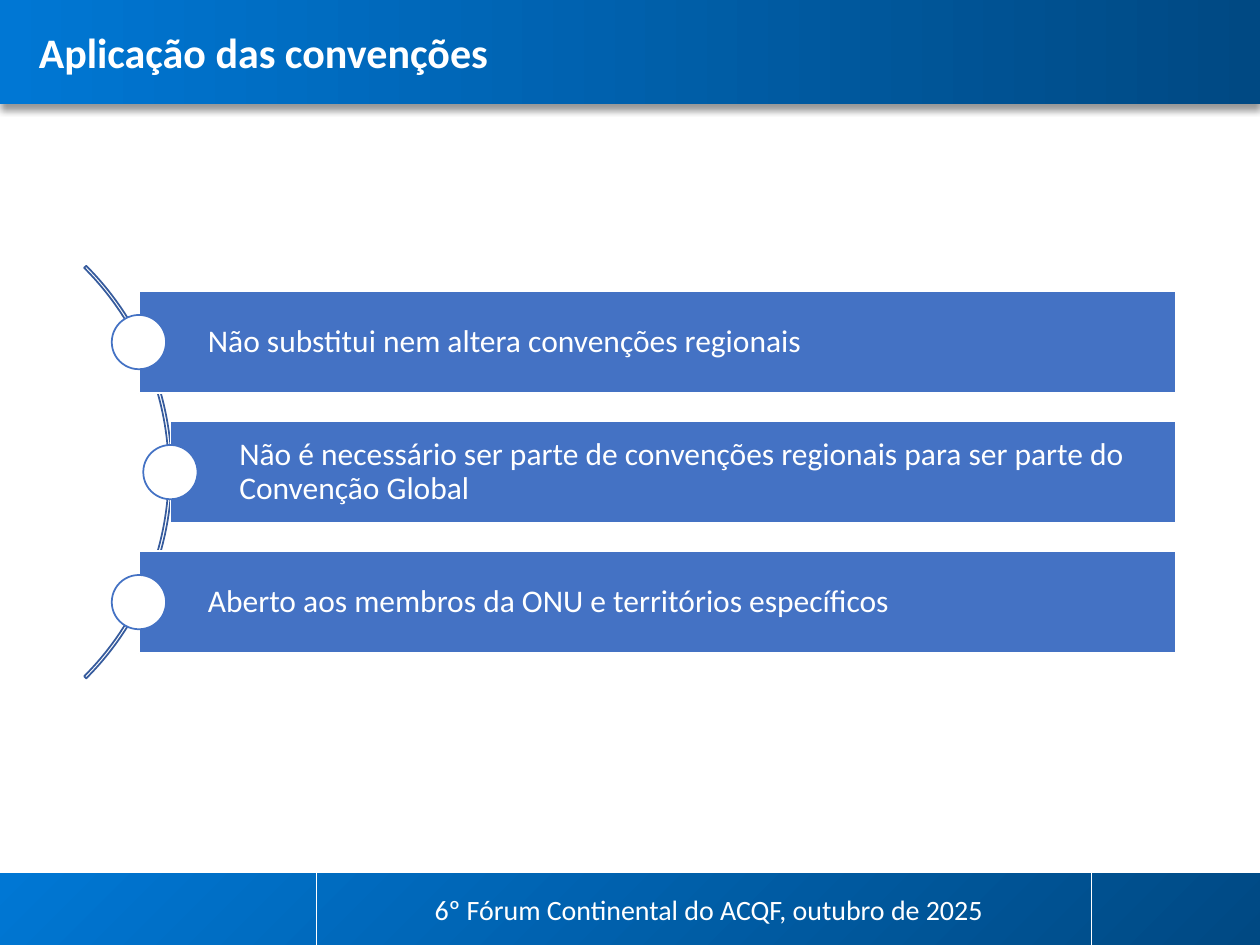
from dataclasses import dataclass

from lxml.etree import SubElement
from pptx import Presentation
from pptx.dml.color import RGBColor
from pptx.enum.shapes import MSO_CONNECTOR as Connector, MSO_SHAPE as Shape
from pptx.enum.text import MSO_ANCHOR as Anchor, MSO_AUTO_SIZE as AutoSize, PP_ALIGN as Align
from pptx.oxml.ns import qn
from pptx.util import Pt


@dataclass(frozen=True)
class Theme:
    font: str = "Calibri"
    title_size: float = 24
    body_size: float = 18
    footer_size: float = 16
    white: RGBColor = RGBColor(0xFF, 0xFF, 0xFF)
    bright: RGBColor = RGBColor(0x00, 0x77, 0xD4)
    dark: RGBColor = RGBColor(0x00, 0x49, 0x83)
    bar: RGBColor = RGBColor(0x44, 0x72, 0xC4)
    arc: RGBColor = RGBColor(0x36, 0x5B, 0x9D)


@dataclass(frozen=True)
class Band:
    top: float
    height: float
    start: RGBColor
    end: RGBColor
    angle: float


@dataclass(frozen=True)
class Label:
    text: str
    left: float
    top: float
    width: float
    height: float
    size: float
    bold: bool = False


@dataclass(frozen=True)
class Item:
    text: str
    left: float


THEME = Theme()
WIDTH, HEIGHT = 720, 540
BAR_RIGHT, BAR_HEIGHT, BAR_PITCH = 671.7, 58.4, 74.3
CENTRE_Y = 269.8
DOT = 31
ARC_LEFT, ARC_SIZE = -235.3, 333.4

BANDS = [
    Band(499, 41, THEME.dark, THEME.bright, 135),
    Band(0, 59.5, THEME.bright, THEME.dark, 0),
]
DIVIDERS = [180.8, 623.5]
LABELS = [
    Label("Aplicação das convenções", 15.1, 11.5, 502, 36, THEME.title_size, True),
    Label("6º Fórum Continental do ACQF, outubro de 2025", 241.2, 506.2, 366.5, 46,
          THEME.footer_size),
]
ITEMS = [
    Item("Não substitui nem altera convenções regionais", 79.4),
    Item("Não é necessário ser parte de convenções regionais para ser parte do \vConvenção Global",
         97.4),
    Item("Aberto aos membros da ONU e territórios específicos", 79.4),
]


def add_shape(slide, kind: Shape, left: float, top: float, width: float, height: float):
    s = slide.shapes.add_shape(kind, Pt(left), Pt(top), Pt(width), Pt(height))
    s.shadow.inherit = False
    return s


def set_line(s, color: RGBColor, width: float = 1) -> None:
    s.line.color.rgb = color
    s.line.width = Pt(width)


def set_text(tf, text: str, size: float, bold: bool = False) -> None:
    tf.text = text
    tf.word_wrap = True
    p = tf.paragraphs[0]
    p.alignment = Align.LEFT
    for r in p.runs:
        r.font.name = THEME.font
        r.font.size = Pt(size)
        r.font.bold = bold
        r.font.color.rgb = THEME.white


def add_band(slide, band: Band):
    s = add_shape(slide, Shape.RECTANGLE, 0, band.top, WIDTH, band.height)
    s.fill.gradient()
    s.fill.gradient_angle = band.angle
    for stop, color, position in zip(s.fill.gradient_stops, (band.start, band.end), (0, 1)):
        stop.color.rgb = color
        stop.position = position
    s.line.fill.background()
    return s


def add_drop_shadow(s) -> None:
    effects = s._element.spPr.find(qn("a:effectLst"))
    shadow = SubElement(effects, qn("a:outerShdw"), blurRad=str(Pt(4)), dist=str(Pt(3)),
                        dir="5400000", algn="t", rotWithShape="0")
    color = SubElement(shadow, qn("a:srgbClr"), val="000000")
    SubElement(color, qn("a:alpha"), val="40000")


def add_divider(slide, x: float) -> None:
    line = slide.shapes.add_connector(Connector.STRAIGHT, Pt(x), Pt(498), Pt(x), Pt(HEIGHT))
    set_line(line, THEME.white, 0.5)
    SubElement(line._element.spPr, qn("a:effectLst"))


def add_label(slide, label: Label) -> None:
    s = slide.shapes.add_textbox(Pt(label.left), Pt(label.top), Pt(label.width), Pt(label.height))
    set_text(s.text_frame, label.text, label.size, label.bold)
    s.text_frame.auto_size = AutoSize.SHAPE_TO_FIT_TEXT


def add_arc(slide) -> None:
    s = add_shape(slide, Shape.BLOCK_ARC, ARC_LEFT, CENTRE_Y - ARC_SIZE / 2, ARC_SIZE, ARC_SIZE)
    for i, value in enumerate((189, 27, 0.005)):
        s.adjustments[i] = value
    s.fill.background()
    set_line(s, THEME.arc)


def add_item(slide, item: Item, centre: float) -> None:
    bar = add_shape(slide, Shape.RECTANGLE, item.left, centre - BAR_HEIGHT / 2,
                    BAR_RIGHT - item.left, BAR_HEIGHT)
    bar.fill.solid()
    bar.fill.fore_color.rgb = THEME.bar
    set_line(bar, THEME.white)
    tf = bar.text_frame
    set_text(tf, item.text, THEME.body_size)
    tf.vertical_anchor = Anchor.MIDDLE
    tf.margin_left = Pt(39.4)
    tf.margin_top = tf.margin_right = tf.margin_bottom = Pt(3.6)
    tf.paragraphs[0].line_spacing = 0.9

    dot = add_shape(slide, Shape.OVAL, item.left - DOT / 2, centre - DOT / 2, DOT, DOT)
    dot.fill.solid()
    dot.fill.fore_color.rgb = THEME.white
    set_line(dot, THEME.bar)


def main() -> None:
    prs = Presentation()
    prs.slide_width, prs.slide_height = Pt(WIDTH), Pt(HEIGHT)
    slide = prs.slides.add_slide(prs.slide_layouts[6])

    # Footer and header bands
    footer, header = [add_band(slide, band) for band in BANDS]
    add_drop_shadow(header)
    for x in DIVIDERS:
        add_divider(slide, x)

    # Title and footer text
    for label in LABELS:
        add_label(slide, label)

    # Curved list, centred on the arc
    add_arc(slide)
    for i, item in enumerate(ITEMS):
        add_item(slide, item, CENTRE_Y + (i - (len(ITEMS) - 1) / 2) * BAR_PITCH)

    prs.save("out.pptx")


if __name__ == "__main__":
    main()
